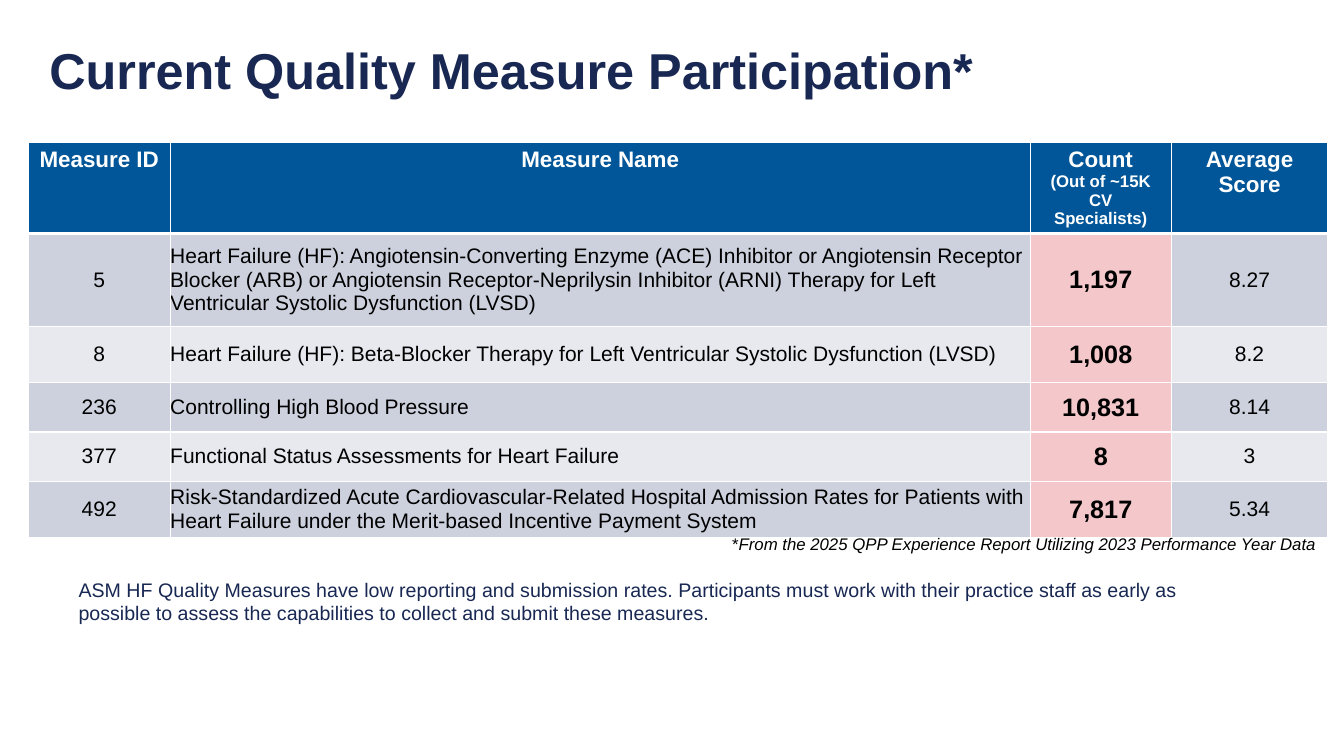
from lxml.etree import SubElement
from pptx import Presentation
from pptx.dml.color import RGBColor
from pptx.enum.text import MSO_ANCHOR as Anchor, MSO_AUTO_SIZE as AutoSize, PP_ALIGN as Align
from pptx.oxml.ns import qn
from pptx.util import Cm, Pt

COLORS = {
    "navy": "182853",
    "header": "005698",
    "band_dark": "CCD1DD",
    "band_light": "E7E9EF",
    "count": "F4C8CB",
    "black": "000000",
    "white": "FFFFFF",
}
FONT = "Arial"
COLUMN_WIDTHS = [3.58, 21.67, 3.56, 3.94]
ROW_HEIGHTS = [1.96, 2.34, 1.42, 1.24, 1.24, 1.42]
HEADERS = ["Measure ID", "Measure Name", "Count\n(Out of ~15K CV Specialists)", "Average Score"]
MEASURES = [
    ("5", "Heart Failure (HF): Angiotensin-Converting Enzyme (ACE) Inhibitor or Angiotensin "
          "Receptor Blocker (ARB) or Angiotensin Receptor-Neprilysin Inhibitor (ARNI) Therapy "
          "for Left Ventricular Systolic Dysfunction (LVSD)", "1,197", "8.27"),
    ("8", "Heart Failure (HF): Beta-Blocker Therapy for Left Ventricular Systolic "
          "Dysfunction (LVSD)", "1,008", "8.2"),
    ("236", "Controlling High Blood Pressure", "10,831", "8.14"),
    ("377", "Functional Status Assessments for Heart Failure", "8", "3"),
    ("492", "Risk-Standardized Acute Cardiovascular-Related Hospital Admission Rates for Patients "
            "with Heart Failure under the Merit-based Incentive Payment System", "7,817", "5.34"),
]
NAME_COLUMN, COUNT_COLUMN = 1, 2


def set_font(font, size, color, bold=False):
    font.name = FONT
    font.size = Pt(size)
    font.bold = bold
    font.color.rgb = RGBColor.from_string(COLORS[color])


def set_borders(cell, bottom_width):
    properties = cell._tc.get_or_add_tcPr()
    for side, width in (("L", 1), ("R", 1), ("T", 1), ("B", bottom_width)):
        line = SubElement(properties, qn(f"a:ln{side}"), w=str(Pt(width)))
        fill = SubElement(line, qn("a:solidFill"))
        SubElement(fill, qn("a:srgbClr"), val=COLORS["white"])


def fill_cell(cell, color, bottom_width=1):
    set_borders(cell, bottom_width)
    cell.fill.solid()
    cell.fill.fore_color.rgb = RGBColor.from_string(COLORS[color])


def add_title(slide, left, top, width, height):
    title = slide.shapes.title
    title.left, title.top, title.width, title.height = left, top, width, height
    frame = title.text_frame
    frame.text = "Current Quality Measure Participation*"
    frame.auto_size = AutoSize.NONE
    frame.vertical_anchor = Anchor.MIDDLE
    paragraph = frame.paragraphs[0]
    paragraph.alignment = Align.LEFT
    paragraph.line_spacing = 0.9
    set_font(paragraph.font, 36, "navy", bold=True)


def add_measure_table(slide, left, top):
    table = slide.shapes.add_table(
        len(ROW_HEIGHTS), len(COLUMN_WIDTHS), left, top,
        Cm(sum(COLUMN_WIDTHS)), Cm(sum(ROW_HEIGHTS))).table
    for column, width in zip(table.columns, COLUMN_WIDTHS):
        column.width = Cm(width)
    for row, height in zip(table.rows, ROW_HEIGHTS):
        row.height = Cm(height)

    # Header row
    for cell, text in zip(table.rows[0].cells, HEADERS):
        cell.text = text
        fill_cell(cell, "header", bottom_width=3)
        for index, paragraph in enumerate(cell.text_frame.paragraphs):
            paragraph.alignment = Align.CENTER
            set_font(paragraph.font, 12 if index else 16, "white", bold=True)

    # Measure rows
    for row_index, measure in enumerate(MEASURES, start=1):
        band = "band_dark" if row_index % 2 else "band_light"
        for column_index, text in enumerate(measure):
            is_count = column_index == COUNT_COLUMN
            cell = table.cell(row_index, column_index)
            cell.text = text
            cell.vertical_anchor = Anchor.MIDDLE
            cell.margin_left = cell.margin_right = cell.margin_top = cell.margin_bottom = 0
            fill_cell(cell, "count" if is_count else band)
            paragraph = cell.text_frame.paragraphs[0]
            paragraph.alignment = Align.LEFT if column_index == NAME_COLUMN else Align.CENTER
            set_font(paragraph.font, 18 if is_count else 15, "black", bold=is_count)


def add_text(slide, left, top, width, height, size, color):
    frame = slide.shapes.add_textbox(left, top, width, height).text_frame
    frame.word_wrap = True
    paragraph = frame.paragraphs[0]
    set_font(paragraph.font, size, color)
    return paragraph


def add_footnote(slide, left, top, width, height):
    paragraph = add_text(slide, left, top, width, height, 12, "black")
    paragraph.level = 1
    paragraph.add_run().text = "*"
    source = paragraph.add_run()
    source.text = "From the 2025 QPP Experience Report Utilizing 2023 Performance Year Data"
    source.font.italic = True


def add_takeaway(slide, left, top, width, height):
    paragraph = add_text(slide, left, top, width, height, 14, "navy")
    paragraph.add_run().text = (
        "ASM HF Quality Measures have low reporting and submission rates. Participants must work "
        "with their practice staff as early as possible to assess the capabilities to collect "
        "and submit these measures.")


def main():
    presentation = Presentation()
    presentation.slide_width, presentation.slide_height = Cm(33.87), Cm(19.05)
    slide = presentation.slides.add_slide(presentation.slide_layouts.get_by_name("Title Only"))
    add_title(slide, Cm(0.99), Cm(0.23), Cm(31.88), Cm(3.25))
    add_measure_table(slide, Cm(0.71), Cm(3.58))
    add_footnote(slide, Cm(16.93), Cm(13.33), Cm(16.93), Cm(0.77))
    add_takeaway(slide, Cm(1.73), Cm(14.43), Cm(28.93), Cm(1.45))
    presentation.save("out.pptx")


if __name__ == "__main__":
    main()
